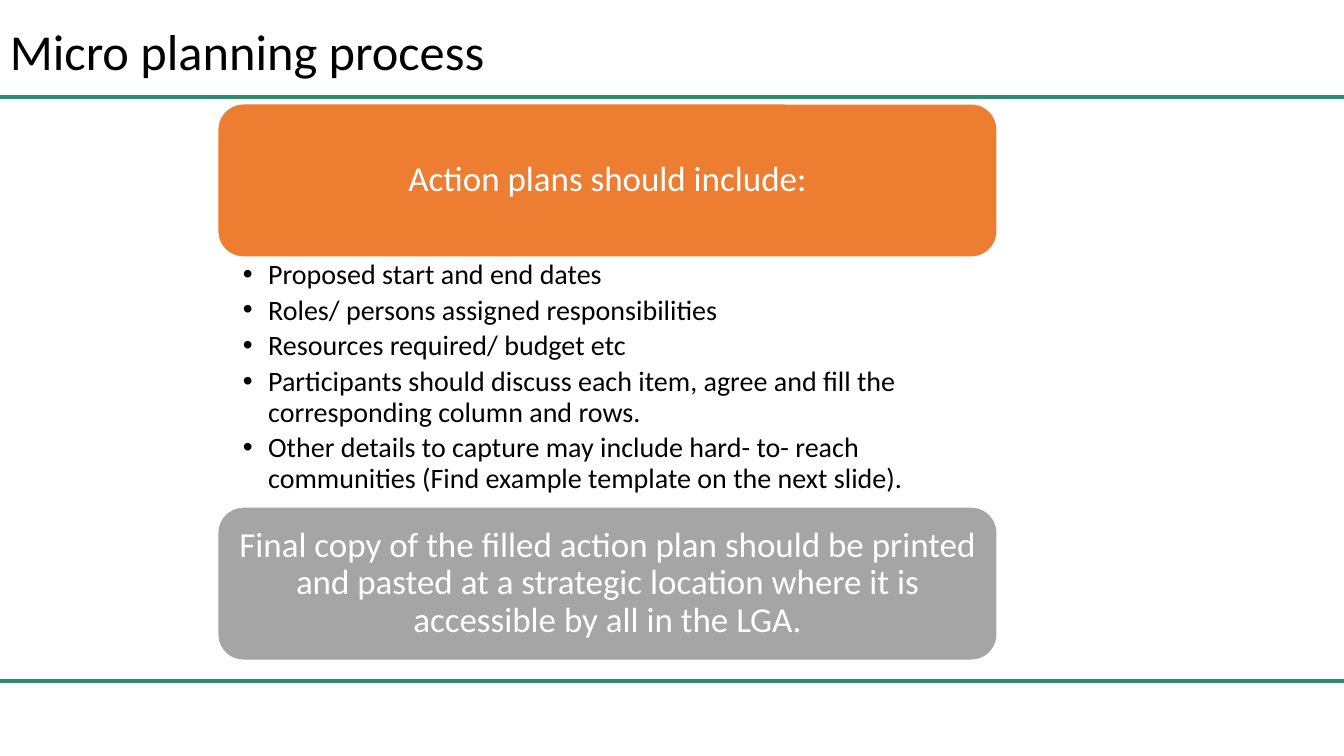
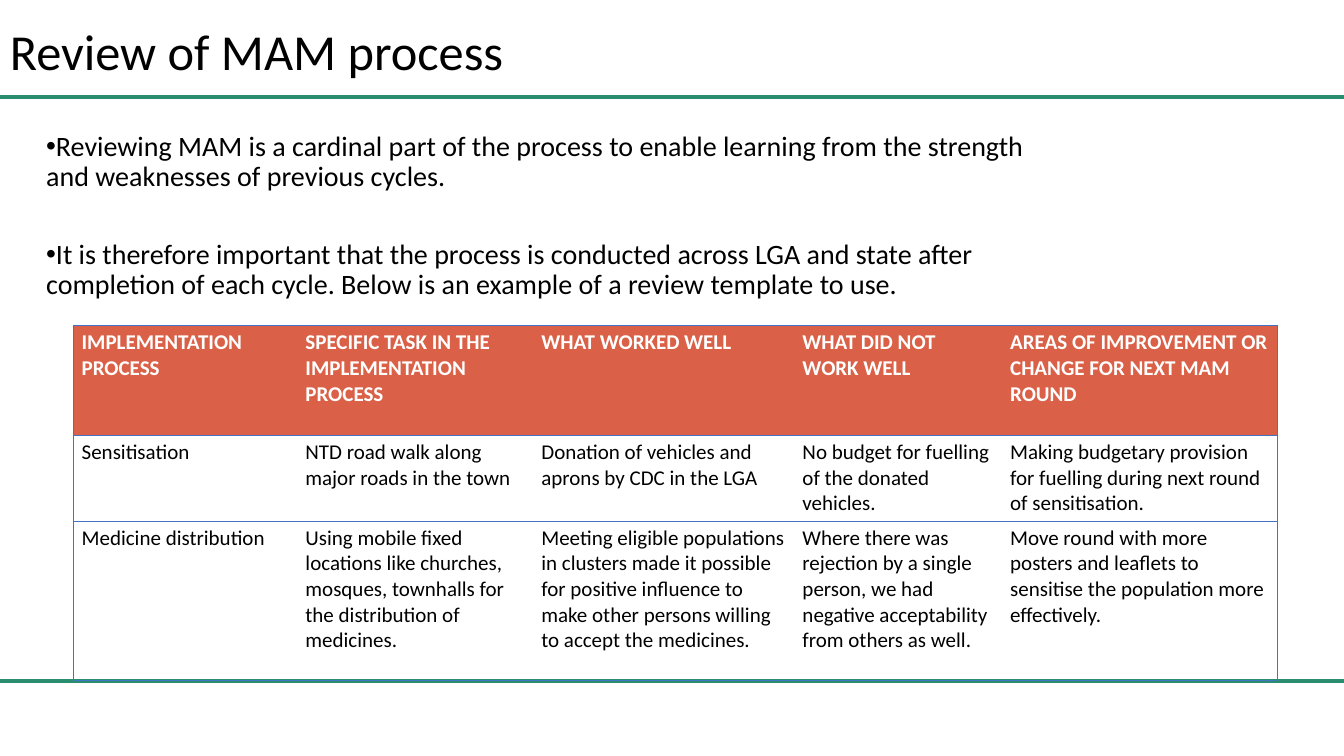
"""Build two slides on micro planning and the review of the MAM process."""
from lxml.etree import SubElement as Sub
from pptx import Presentation
from pptx.dml.color import RGBColor as RGB
from pptx.enum.shapes import MSO_CONNECTOR as LINE, MSO_SHAPE as SHAPE
from pptx.enum.text import MSO_ANCHOR as ANCHOR, PP_ALIGN as ALIGN
from pptx.oxml.ns import qn
from pptx.util import Emu, Pt

PX = 9144
WIDE, HIGH = 1333, 750
GREEN = RGB(0x2B, 0x8D, 0x6F)
ORANGE = RGB(0xED, 0x7D, 0x31)
GREY = RGB(0xA5, 0xA5, 0xA5)
RED = RGB(0xDA, 0x61, 0x47)
BLUE = RGB(0x44, 0x72, 0xC4)
WHITE = RGB(0xFF, 0xFF, 0xFF)
BLACK = RGB(0, 0, 0)

RULES = (676, 96)
TITLE = (0, 2, 1340, 104)
PLAN = (216, 103, 773, 552)
BAND = 152
INTRO = (36, 105, 1034, 220)
GRID = (73, 323)
COLS = (222, 234, 259, 206, 273)
ROWS = (109, 85, 158)

ITEMS = (
    "Proposed start and end dates",
    "Roles/ persons assigned responsibilities",
    "Resources required/ budget etc",
    "Participants should discuss each item, agree and fill the corresponding column and rows.",
    "Other details to capture may include hard- to- reach communities "
    "(Find example template on the next slide).",
)
FINAL = ("Final copy of the filled action plan should be printed and pasted at a "
         "strategic location where it is accessible by all in the LGA.")
POINTS = (
    "Reviewing MAM is a cardinal part of the process to enable learning from the "
    "strength and weaknesses of previous cycles.",
    "It is therefore important that the process is conducted across LGA and state "
    "after completion of each cycle. Below is an example of a review template to use.",
)
CELLS = (
    ("IMPLEMENTATION PROCESS", "SPECIFIC TASK IN THE IMPLEMENTATION PROCESS",
     "WHAT WORKED WELL", "WHAT DID NOT WORK WELL",
     "AREAS OF IMPROVEMENT OR CHANGE FOR NEXT MAM ROUND"),
    ("Sensitisation", "NTD road walk along major roads in the town",
     "Donation of vehicles and aprons by CDC in the LGA",
     "No budget for fuelling of the donated vehicles.",
     "Making budgetary provision for fuelling during next round of sensitisation."),
    ("Medicine distribution",
     "Using mobile fixed locations like churches, mosques, townhalls for the "
     "distribution of medicines.",
     "Meeting eligible populations in clusters made it possible for positive "
     "influence to make other persons willing to accept the medicines.",
     "Where there was rejection by a single person, we had negative acceptability "
     "from others as well.",
     "Move round with more posters and leaflets to sensitise the population more "
     "effectively."),
)


def px(*nums):
    """Turn pixel lengths into EMU."""
    return [Emu(n * PX) for n in nums]


def style(item, **form):
    """Set each format value on an item."""
    for key, val in form.items():
        setattr(item, key, val)


def inset(item, *sides):
    """Set the left, top, right and bottom margins."""
    names = ("margin_left", "margin_top", "margin_right", "margin_bottom")
    style(item, **dict(zip(names, px(*sides))))


def write(frame, texts, size, color=BLACK, bold=False, mark=None, **form):
    """Fill a frame with paragraphs, bulleted when mark gives margin and indent."""
    frame.word_wrap = True
    for num, text in enumerate(texts):
        para = frame.add_paragraph() if num else frame.paragraphs[0]
        if mark:
            props = para._p.get_or_add_pPr()
            for key, val in zip(("marL", "indent"), px(*mark)):
                props.set(key, str(val))
            Sub(props, qn("a:buFont"), typeface="Arial")
            Sub(props, qn("a:buChar"), char="•")
        style(para, **form)
        run = para.add_run()
        run.text = text
        style(run.font, name="Calibri", size=Pt(size), bold=bold)
        run.font.color.rgb = color


def label(slide, box, texts, size, anchor, sides=(10, 5, 10, 5), **form):
    """Place a text box."""
    frame = slide.shapes.add_textbox(*px(*box)).text_frame
    frame.vertical_anchor = anchor
    inset(frame, *sides)
    write(frame, texts, size, line_spacing=0.9, **form)


def base(deck, title):
    """Add a blank slide with its rules and title."""
    slide = deck.slides.add_slide(deck.slide_layouts[6])
    for y in RULES:
        rule = slide.shapes.add_connector(LINE.STRAIGHT, *px(0, y, WIDE, y))
        rule.line.color.rgb = GREEN
        rule.line.width = Pt(3)
        Sub(rule._element.spPr, qn("a:effectLst"))
    label(slide, TITLE, [title], 36, ANCHOR.MIDDLE)
    return slide


def band(slide, box, text, color):
    """Place a rounded band with centred text."""
    shape = slide.shapes.add_shape(SHAPE.ROUNDED_RECTANGLE, *px(*box))
    shape.shadow.inherit = False
    shape.fill.solid()
    shape.fill.fore_color.rgb = color
    shape.line.color.rgb = WHITE
    shape.line.width = Pt(1)
    frame = shape.text_frame
    frame.vertical_anchor = ANCHOR.MIDDLE
    inset(frame, 10, 10, 10, 10)
    write(frame, [text], 25, WHITE, alignment=ALIGN.CENTER, line_spacing=0.9)


def plan(slide, box):
    """Stack a heading band, a bullet list and a closing band."""
    x, y, w, h = box
    band(slide, (x, y, w, BAND), "Action plans should include:", ORANGE)
    label(slide, (x, y + BAND, w, h - 2 * BAND), ITEMS, 20, ANCHOR.TOP,
          (25, 3, 19, 3), mark=(25, -25), space_after=Pt(4))
    band(slide, (x, y + h - BAND, w, BAND), FINAL, GREY)


def edge(cell, sides):
    """Draw the named cell borders and clear the others."""
    props = cell._tc.get_or_add_tcPr()
    for side in "LRTB":
        line = Sub(props, qn(f"a:ln{side}"), w=str(Pt(0.5)))
        if side in sides:
            fill = Sub(line, qn("a:solidFill"))
            Sub(fill, qn("a:srgbClr"), val=str(BLUE))
        else:
            Sub(line, qn("a:noFill"))


def grid(slide, spot):
    """Place the review table."""
    size = (sum(COLS), sum(ROWS))
    table = slide.shapes.add_table(len(ROWS), len(COLS), *px(*spot, *size)).table
    table.horz_banding = False
    for col, wide in zip(table.columns, px(*COLS)):
        col.width = wide
    for row, high in zip(table.rows, px(*ROWS)):
        row.height = high
    last = len(COLS) - 1
    for r, texts in enumerate(CELLS):
        for c, text in enumerate(texts):
            cell = table.cell(r, c)
            inset(cell, 8, 4, 8, 4)
            edge(cell, "TB" + "L" * (c == 0) + "R" * (c == last))
            if r:
                cell.fill.background()
            else:
                cell.fill.solid()
                cell.fill.fore_color.rgb = RED
            write(cell.text_frame, [text], 15, BLACK if r else WHITE, not r)


def main():
    """Build and save the deck."""
    deck = Presentation()
    deck.slide_width, deck.slide_height = px(WIDE, HIGH)
    plan(base(deck, "Micro planning process"), PLAN)
    review = base(deck, "Review of MAM process")
    grid(review, GRID)
    label(review, INTRO, POINTS, 20, ANCHOR.MIDDLE, mark=(0, -25), space_after=Pt(34))
    deck.save("out.pptx")


if __name__ == "__main__":
    main()
